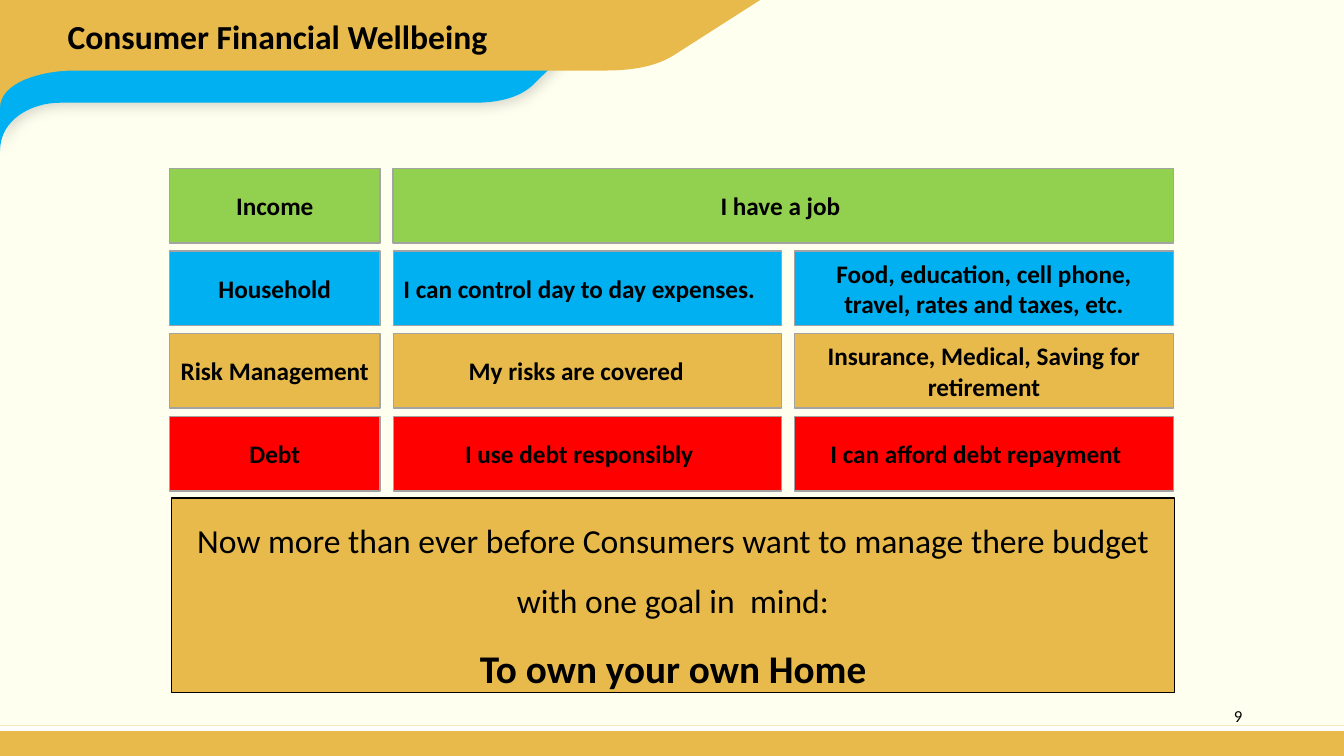
from dataclasses import dataclass

from lxml import etree
from pptx import Presentation
from pptx.dml.color import RGBColor
from pptx.enum.shapes import MSO_SHAPE
from pptx.enum.text import MSO_ANCHOR, PP_ALIGN
from pptx.oxml.ns import qn
from pptx.util import Pt

PX = 9144  # EMU in one px, 100 px to the inch
TITLE_ONLY = 5
CURVE_STEPS = 16
RECTANGLE = MSO_SHAPE.RECTANGLE
TOP, MIDDLE = MSO_ANCHOR.TOP, MSO_ANCHOR.MIDDLE
LEFT, CENTER, RIGHT = PP_ALIGN.LEFT, PP_ALIGN.CENTER, PP_ALIGN.RIGHT


@dataclass(frozen=True)
class Theme:
    font: str = "Calibri"
    paper: str = "FFFFF0"
    ink: str = "000000"
    white: str = "FFFFFF"
    gold: str = "E7BA4B"
    blue: str = "00B0F0"
    green: str = "92D050"
    red: str = "FF0000"
    border: str = "A3A3A3"
    title_size: int = 24
    cell_size: int = 18
    message_size: int = 24
    goal_size: int = 28
    number_size: int = 12


def bezier(start, curve):
    """Points along a cubic curve; curve holds two controls and the end."""
    x1, y1, x2, y2, x3, y3 = curve
    for step in range(1, CURVE_STEPS + 1):
        t = step / CURVE_STEPS
        u = 1 - t
        weights = (u**3, 3 * u * u * t, 3 * u * t * t, t**3)
        yield tuple(
            sum(w * v for w, v in zip(weights, values))
            for values in ((start[0], x1, x2, x3), (start[1], y1, y2, y3))
        )


class SlideBuilder:
    def __init__(self, presentation, theme):
        self.theme = theme
        self.slide = presentation.slides.add_slide(
            presentation.slide_layouts[TITLE_ONLY])
        background = self.slide.background.fill
        background.solid()
        background.fore_color.rgb = RGBColor.from_string(theme.paper)

    def paint(self, shape, fill, line=None):
        shape.shadow.inherit = False
        shape.fill.solid()
        shape.fill.fore_color.rgb = RGBColor.from_string(fill)
        if line:
            shape.line.color.rgb = RGBColor.from_string(line)
            shape.line.width = Pt(1)
        else:
            shape.line.fill.background()

    def set_text(self, shape, lines, align, anchor, spacing=1.0, nudge=0):
        """Set lines of (text, size, bold); nudge moves them left by px."""
        frame = shape.text_frame
        frame.word_wrap = True
        frame.vertical_anchor = anchor
        frame.margin_left = (10 - nudge) * PX
        frame.margin_right = (10 + nudge) * PX
        frame.margin_top = frame.margin_bottom = 5 * PX
        frame.text = "\n".join(text for text, _, _ in lines)
        for paragraph, (_, size, bold) in zip(frame.paragraphs, lines):
            paragraph.alignment = align
            paragraph.line_spacing = spacing
            paragraph.font.name = self.theme.font
            paragraph.font.size = Pt(size)
            paragraph.font.bold = bold
            paragraph.font.color.rgb = RGBColor.from_string(self.theme.ink)

    def box(self, left, top, width, height, fill, line=None):
        shape = self.slide.shapes.add_shape(
            RECTANGLE, left * PX, top * PX, width * PX, height * PX)
        self.paint(shape, fill, line)
        return shape

    def cell(self, left, top, width, height, fill, text, nudge=0):
        shape = self.box(left, top, width, height, fill, self.theme.border)
        self.set_text(shape, [(text, self.theme.cell_size, True)],
                      CENTER, MIDDLE, nudge=nudge)

    def ribbon(self, start, segments, fill):
        """Outline of lines (two numbers) and cubic curves (six numbers)."""
        points = [start]
        for segment in segments:
            if len(segment) == 2:
                points.append(segment)
            else:
                points.extend(bezier(points[-1], segment))
        emu = [(round(x * PX), round(y * PX)) for x, y in points]
        builder = self.slide.shapes.build_freeform(*emu[0])
        builder.add_line_segments(emu[1:], close=True)
        shape = builder.convert_to_shape()
        self.paint(shape, fill)
        return shape

    def soft_shadow(self, shape):
        effects = shape.element.spPr.find(qn("a:effectLst"))
        shadow = etree.SubElement(
            effects, qn("a:outerShdw"), blurRad=str(Pt(10)), dist=str(Pt(3)),
            dir="2700000", algn="tl", rotWithShape="0")
        color = etree.SubElement(shadow, qn("a:srgbClr"), val=self.theme.ink)
        etree.SubElement(color, qn("a:alpha"), val="16000")

    def title(self, left, top, width, height, text):
        title = self.slide.shapes.title
        title.left, title.top = left * PX, top * PX
        title.width, title.height = width * PX, height * PX
        self.set_text(title, [(text, self.theme.title_size, True)], LEFT, TOP)
        # Bring the title in front of the ribbons
        title.element.getparent().append(title.element)

    def page_number(self, left, top, width, height, text):
        number = self.slide.shapes.add_textbox(
            left * PX, top * PX, width * PX, height * PX)
        self.set_text(
            number, [(text, self.theme.number_size, False)], RIGHT, TOP)


def main():
    theme = Theme()
    presentation = Presentation()
    presentation.slide_width = 1333 * PX
    presentation.slide_height = 750 * PX
    page = SlideBuilder(presentation, theme)

    page.box(0, 720, 1333, 30, theme.gold)
    page.box(0, 720, 1333, 5, theme.white)

    message = page.box(170, 494, 995, 193, theme.gold, theme.ink)
    page.set_text(message, [
        ("Now more than ever before Consumers want to manage there budget "
         "with one goal in  mind:", theme.message_size, False),
        ("To own your own Home", theme.goal_size, True),
    ], CENTER, MIDDLE, spacing=1.5)

    # Each row: colour, label, then statements as (text, nudge)
    rows = [
        (theme.green, "Income", [("I have a job", 3)]),
        (theme.blue, "Household", [
            ("I can control day to day expenses.", 8),
            ("Food, education, cell phone, travel, rates and taxes, etc.", 0)]),
        (theme.gold, "Risk Management", [
            ("My risks are covered", 11),
            ("Insurance, Medical, Saving for retirement", 0)]),
        (theme.red, "Debt", [
            ("I use debt responsibly", 8),
            ("I can afford debt repayment", 8)]),
    ]
    row_top, row_pitch, row_height = 167, 82, 74
    half_columns = [(390, 385), (788, 376)]
    full_column = [(390, 774)]
    for index, (color, label, statements) in enumerate(rows):
        top = row_top + index * row_pitch
        page.cell(168, top, 209, row_height, color, label)
        columns = full_column if len(statements) == 1 else half_columns
        for (left, width), (statement, nudge) in zip(columns, statements):
            page.cell(left, top, width, row_height, color, statement, nudge)

    blue_ribbon = page.ribbon((599, 14), [
        (530, 83), (515, 98, 492, 102, 469, 102),
        (59, 102), (32, 102, 0, 118, 0, 150), (0, 14)], theme.blue)
    page.soft_shadow(blue_ribbon)
    page.ribbon((754, 0), [
        (668, 55), (652, 65, 630, 70, 601, 70),
        (74, 70), (40, 70, 0, 82, 0, 107), (0, 0)], theme.gold)

    page.title(57, 11, 610, 50, "Consumer Financial Wellbeing")
    page.page_number(942, 695, 300, 40, "9")
    presentation.save("out.pptx")


if __name__ == "__main__":
    main()
